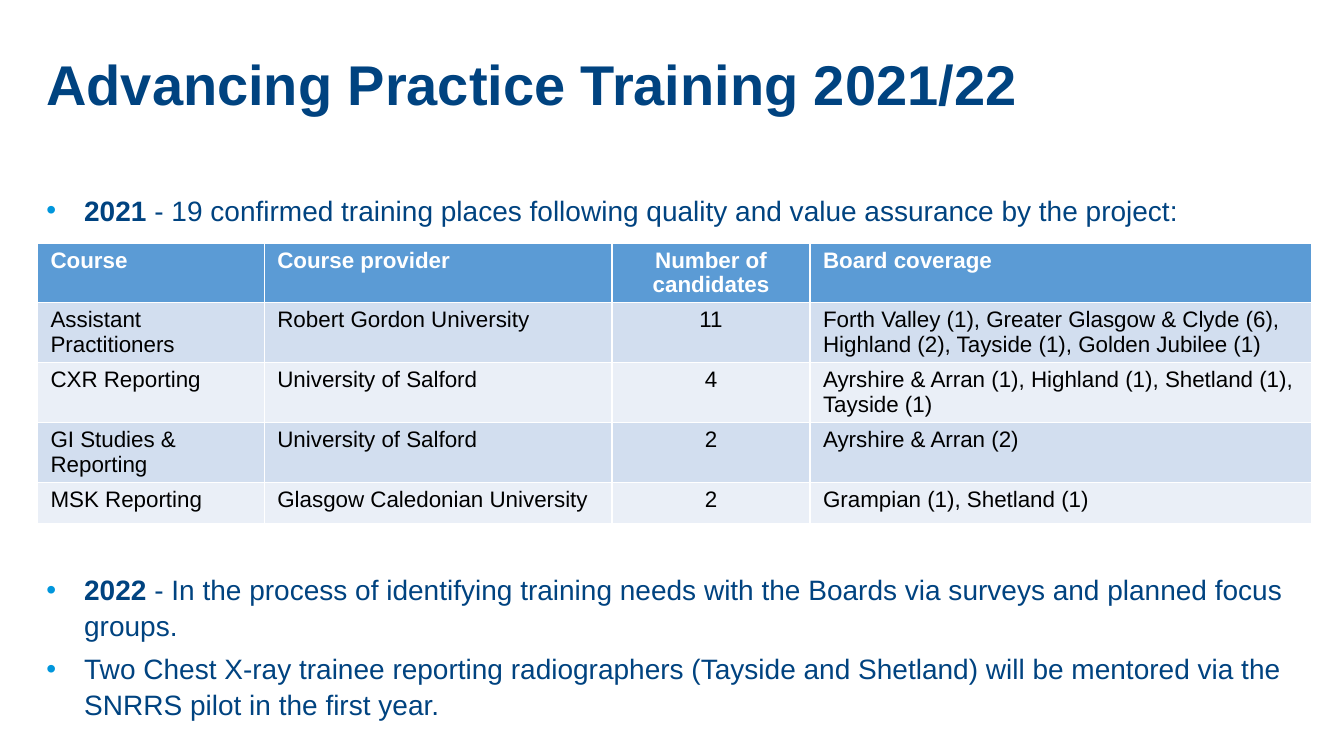
from dataclasses import dataclass

from lxml.etree import SubElement
from pptx import Presentation
from pptx.dml.color import RGBColor
from pptx.enum.text import MSO_ANCHOR as Anchor, MSO_AUTO_SIZE as AutoSize, PP_ALIGN as Align
from pptx.oxml.ns import qn
from pptx.util import Pt


@dataclass(frozen=True)
class Theme:
    """Colours, font and type sizes of the slide."""
    font: str = "Arial"
    navy: str = "004380"
    bullet: str = "0096DC"
    header: str = "5B9BD5"
    bands: tuple = ("D2DEEF", "EAEFF7")
    white: str = "FFFFFF"
    black: str = "000000"
    title_size: int = 40
    body_size: int = 20
    table_size: int = 16


THEME = Theme()
TITLE = "Advancing Practice Training 2021/22"
BULLETS = [
    ("2021", " - 19 confirmed training places following quality and value assurance by the project:"),
    ("2022", " - In the process of identifying training needs with the Boards via surveys and planned focus groups."),
    ("", "Two Chest X-ray trainee reporting radiographers (Tayside and Shetland) will be mentored via the "
         "SNRRS pilot in the first year."),
]
COURSES = [
    ("Course", "Course provider", "Number of candidates", "Board coverage"),
    ("Assistant Practitioners", "Robert Gordon University", "11",
     "Forth Valley (1), Greater Glasgow & Clyde (6), Highland (2), Tayside (1), Golden Jubilee (1)"),
    ("CXR Reporting", "University of Salford", "4",
     "Ayrshire & Arran (1), Highland (1), Shetland (1), Tayside (1)"),
    ("GI Studies & Reporting", "University of Salford", "2", "Ayrshire & Arran (2)"),
    ("MSK Reporting", "Glasgow Caledonian University", "2", "Grampian (1), Shetland (1)"),
]
COLUMN_WIDTHS = (162, 248.4, 141.4, 358)
ROW_HEIGHTS = (42.8, 42.8, 42.8, 42.8, 29.2)
CANDIDATES_COLUMN = 2
TABLE_GAP = 240


def place(shape, box):
    """Move a shape to a box of left, top, width and height in points."""
    shape.left, shape.top, shape.width, shape.height = map(Pt, box)


def style_run(run, size, color, bold=False):
    """Give a run its font, size, colour and weight."""
    run.font.name = THEME.font
    run.font.size = Pt(size)
    run.font.color.rgb = RGBColor.from_string(color)
    run.font.bold = bold


def add_bullet(paragraph):
    """Give a paragraph a hanging, coloured bullet."""
    properties = paragraph._p.get_or_add_pPr()
    properties.set("marL", str(Pt(27)))
    properties.set("indent", str(-Pt(27)))
    color = SubElement(properties, qn("a:buClr"))
    SubElement(color, qn("a:srgbClr"), val=THEME.bullet)
    SubElement(properties, qn("a:buFont"), typeface=THEME.font)
    SubElement(properties, qn("a:buChar"), char="•")


def fill_title(slide, box):
    """Write the slide title in its placeholder."""
    title = slide.shapes.title
    place(title, box)
    frame = title.text_frame
    frame.text = TITLE
    frame.vertical_anchor = Anchor.MIDDLE
    frame.auto_size = AutoSize.NONE
    paragraph = frame.paragraphs[0]
    paragraph.alignment = Align.LEFT
    paragraph.line_spacing = 0.9
    style_run(paragraph.runs[0], THEME.title_size, THEME.navy, True)


def fill_body(slide, box):
    """Write the bullets, leaving room for the table after the first."""
    body = slide.placeholders[1]
    place(body, box)
    frame = body.text_frame
    frame.auto_size = AutoSize.NONE
    for index, (year, text) in enumerate(BULLETS):
        paragraph = frame.paragraphs[0] if index == 0 else frame.add_paragraph()
        add_bullet(paragraph)
        paragraph.line_spacing = 1.05
        paragraph.space_before = Pt(TABLE_GAP if index == 1 else 0)
        paragraph.space_after = Pt(6)
        for part, bold in ((year, True), (text, False)):
            if part:
                run = paragraph.add_run()
                run.text = part
                style_run(run, THEME.body_size, THEME.navy, bold)


def add_course_table(slide, box):
    """Draw the table of courses, providers, candidates and boards."""
    table = slide.shapes.add_table(len(COURSES), len(COLUMN_WIDTHS), *map(Pt, box)).table
    for column, width in zip(table.columns, COLUMN_WIDTHS):
        column.width = Pt(width)
    for row_index, (values, height) in enumerate(zip(COURSES, ROW_HEIGHTS)):
        is_header = row_index == 0
        table.rows[row_index].height = Pt(height)
        fill = THEME.header if is_header else THEME.bands[(row_index - 1) % 2]
        for column_index, value in enumerate(values):
            cell = table.cell(row_index, column_index)
            cell.margin_left = cell.margin_right = Pt(9.36)
            cell.fill.solid()
            cell.fill.fore_color.rgb = RGBColor.from_string(fill)
            cell.text_frame.text = value
            paragraph = cell.text_frame.paragraphs[0]
            if column_index == CANDIDATES_COLUMN:
                paragraph.alignment = Align.CENTER
            color = THEME.white if is_header else THEME.black
            style_run(paragraph.runs[0], THEME.table_size, color, is_header)


def build_training_slide(presentation, box):
    """Build the training slide inside the given box."""
    left, top, width, height = box
    slide = presentation.slides.add_slide(presentation.slide_layouts[1])
    fill_title(slide, (left, top, 864, 51))
    fill_body(slide, (left, top + 96.5, width, height - 96.5))
    add_course_table(slide, (left + 0.9, top + 136.8, sum(COLUMN_WIDTHS), sum(ROW_HEIGHTS)))


def main():
    """Create and save the presentation."""
    presentation = Presentation()
    presentation.slide_width = Pt(960)
    presentation.slide_height = Pt(540)
    build_training_slide(presentation, (25.9, 36.7, 910, 503.3))
    presentation.save("out.pptx")


if __name__ == "__main__":
    main()
